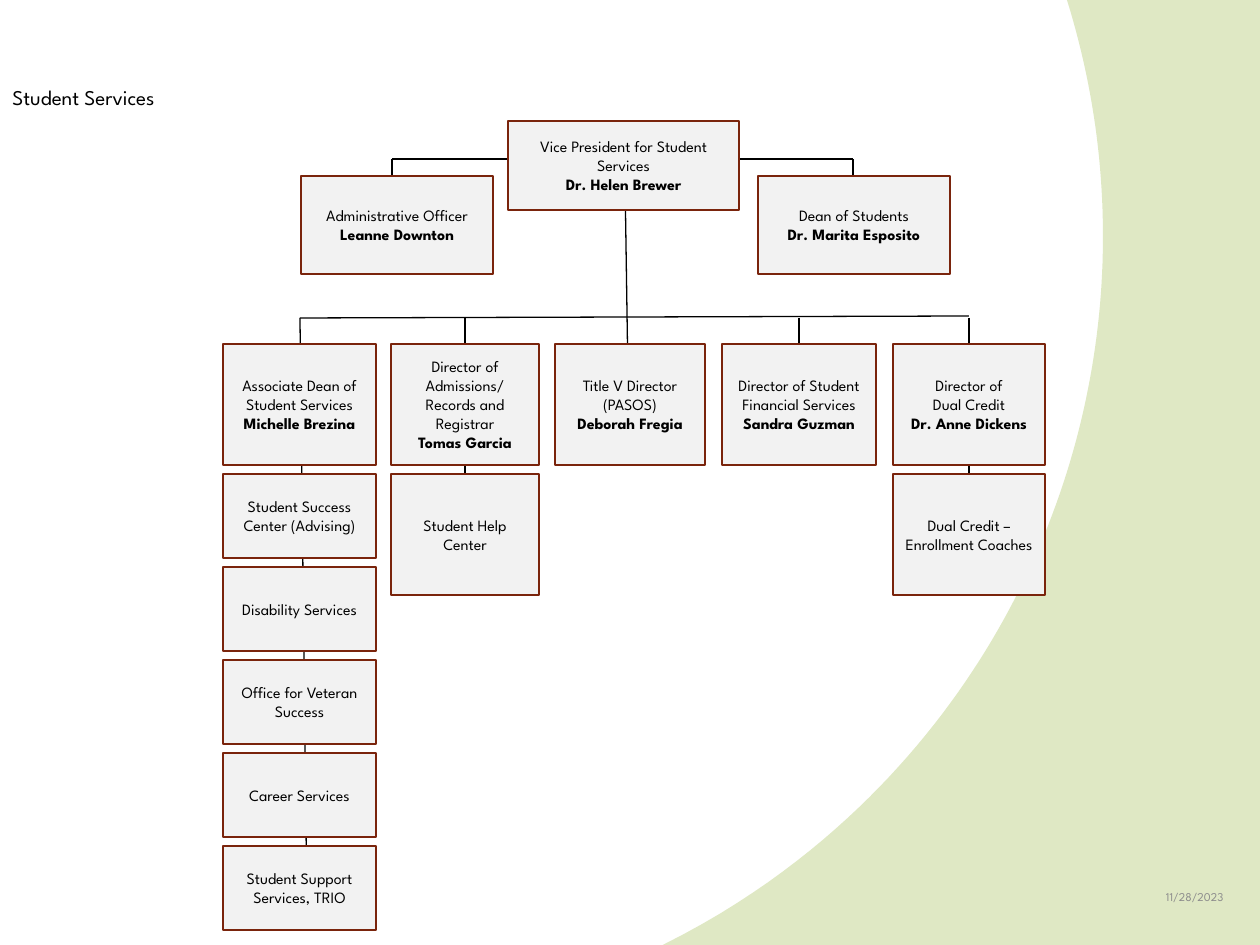
import math
from dataclasses import dataclass

import pptx
import pptx.dml.color
import pptx.enum.shapes
import pptx.enum.text
import pptx.oxml.ns
import pptx.util
from lxml import etree

EMU_PER_PX = 914400 / 126
WIDTH, HEIGHT = 1260, 945


@dataclass(frozen=True)
class Theme:
    font: str = "League Spartan"
    text: str = "000000"
    muted: str = "8C8C8C"
    paper: str = "FFFFFF"
    accent: str = "DFE8C4"
    box_fill: str = "F2F2F2"
    box_line: str = "7A240C"
    title_size: float = 12
    box_size: float = 9
    date_size: float = 6.8
    box_weight: float = 1.25
    line_weight: float = 0.75


THEME = Theme()
ALIGN = pptx.enum.text.PP_ALIGN
MIDDLE = pptx.enum.text.MSO_ANCHOR.MIDDLE


def px(*lengths):
    return [round(length * EMU_PER_PX) for length in lengths]


def color(value):
    return pptx.dml.color.RGBColor.from_string(value)


def format_text(text_frame, size, text_color, align):
    for paragraph in text_frame.paragraphs:
        paragraph.alignment = align
        for run in paragraph.runs:
            run.font.name = THEME.font
            run.font.size = pptx.util.Pt(size)
            run.font.color.rgb = color(text_color)


def add_line(slide, x1, y1, x2, y2):
    connector = slide.shapes.add_connector(
        pptx.enum.shapes.MSO_CONNECTOR.STRAIGHT, *px(x1, y1, x2, y2))
    connector.line.color.rgb = color(THEME.text)
    connector.line.width = pptx.util.Pt(THEME.line_weight)
    etree.SubElement(connector._element.spPr, pptx.oxml.ns.qn("a:effectLst"))


def add_role(slide, box, role, person=None):
    """A chart box: the role, then the person's name in bold."""
    shape = slide.shapes.add_shape(
        pptx.enum.shapes.MSO_SHAPE.RECTANGLE, *px(*box))
    shape.shadow.inherit = False
    shape.fill.solid()
    shape.fill.fore_color.rgb = color(THEME.box_fill)
    shape.line.color.rgb = color(THEME.box_line)
    shape.line.width = pptx.util.Pt(THEME.box_weight)
    text_frame = shape.text_frame
    text_frame.word_wrap = True
    text_frame.vertical_anchor = MIDDLE
    text_frame.text = f"{role}\n{person}" if person else role
    format_text(text_frame, THEME.box_size, THEME.text, ALIGN.CENTER)
    if person:
        text_frame.paragraphs[-1].runs[0].font.bold = True


def add_label(slide, box, text, size, text_color, align, wrap):
    label = slide.shapes.add_textbox(*px(*box))
    label.text_frame.word_wrap = wrap
    label.text_frame.text = text
    format_text(label.text_frame, size, text_color, align)
    return label


def draw_background(slide, box):
    """Green field to the right of a large circle's edge."""
    left, top, width, height = box
    center_x, center_y, radius = left + 312, top + 236, 791
    slide.background.fill.solid()
    slide.background.fill.fore_color.rgb = color(THEME.paper)
    steps = 90
    edge = []
    for step in range(steps + 1):
        y = top + height * step / steps
        edge.append((center_x + math.sqrt(radius ** 2 - (y - center_y) ** 2), y))
    corners = [(left + width, top + height), (left + width, top)]
    builder = slide.shapes.build_freeform(*px(*edge[0]), scale=1.0)
    builder.add_line_segments([px(*point) for point in edge[1:] + corners])
    field = builder.convert_to_shape()
    field.shadow.inherit = False
    field.fill.solid()
    field.fill.fore_color.rgb = color(THEME.accent)
    field.line.fill.background()


def draw_leadership(slide, box):
    """Vice President with one report on either side."""
    left, top, width, height = box
    side_width, side_top, side_height = 192, top + 55, 98
    arm_y = top + 38
    center = left + width / 2
    add_line(slide, center, top + height, center + 2, 344)
    sides = [
        (left, "Administrative Officer", "Leanne Downton"),
        (left + width - side_width, "Dean of Students", "Dr. Marita Esposito"),
    ]
    for side_left, role, person in sides:
        elbow = side_left + (91 if side_left == left else 95)
        add_line(slide, elbow, side_top, elbow, arm_y)
        add_line(slide, elbow, arm_y, center, arm_y)
        add_role(slide, (side_left, side_top, side_width, side_height), role, person)
    add_role(slide, (left + 207, top, 231, height),
             "Vice President for Student Services", "Dr. Helen Brewer")


def draw_department(slide, box, head, units, stem, unit_height):
    """Department head, with its units stacked below on one stem."""
    left, top, width, height = box
    gap = 9
    if stem:
        x, lean = stem
        bottom = top + height + len(units) * (unit_height + gap)
        add_line(slide, left + x, top - 26, left + x + lean, bottom - 20)
    add_role(slide, box, *head)
    for index, unit in enumerate(units):
        unit_top = top + height + gap + index * (unit_height + gap)
        add_role(slide, (left, unit_top, width, unit_height), unit)


def draw_departments(slide, box):
    left, top, width, height = box
    # left offset, width, head, units, stem (offset, lean), unit height
    departments = [
        (0, 153, ("Associate Dean of Student Services", "Michelle Brezina"),
         ["Student Success Center (Advising)", "Disability Services",
          "Office for Veteran Success", "Career Services",
          "Student Support Services, TRIO"], (77, 7), 84),
        (168, 148, ("Director of Admissions/ Records and Registrar", "Tomas Garcia"),
         ["Student Help Center"], (74, 0), 121),
        (332, 150, ("Title V Director (PASOS)", "Deborah Fregia"), [], None, 0),
        (499, 154, ("Director of Student Financial Services", "Sandra Guzman"),
         [], (77, 0), 0),
        (670, 152, ("Director of\nDual Credit", "Dr. Anne Dickens"),
         ["Dual Credit – Enrollment Coaches"], (76, 0), 121),
    ]
    add_line(slide, left + 77, top - 26, left + 746, top - 28)
    for offset, column_width, head, units, stem, unit_height in departments:
        draw_department(slide, (left + offset, top, column_width, height),
                        head, units, stem, unit_height)


def main():
    presentation = pptx.Presentation()
    presentation.slide_width, presentation.slide_height = px(WIDTH, HEIGHT)
    slide = presentation.slides.add_slide(presentation.slide_layouts[6])

    draw_background(slide, (0, 0, WIDTH, HEIGHT))

    # Title and date
    add_label(slide, (0, 78, 193, 38), "Student Services",
              THEME.title_size, THEME.text, ALIGN.LEFT, False)
    date = add_label(slide, (1118, 871, 118, 52), "11/28/2023",
                     THEME.date_size, THEME.muted, ALIGN.RIGHT, True)
    date.text_frame.vertical_anchor = MIDDLE

    # Organisation chart
    draw_leadership(slide, (301, 121, 649, 89))
    draw_departments(slide, (223, 344, 822, 121))

    presentation.save("out.pptx")


if __name__ == "__main__":
    main()
